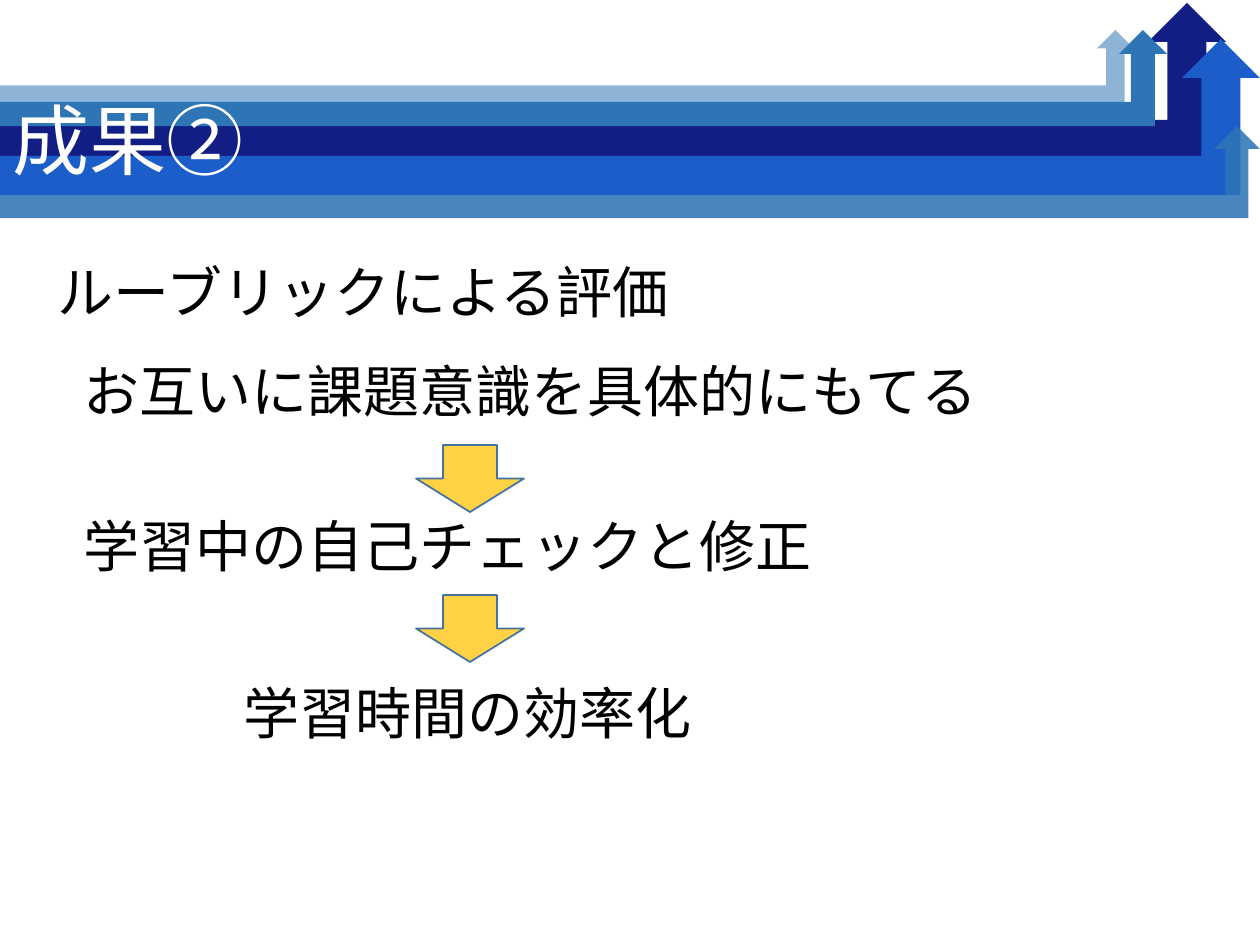
"""Build the results slide with a banner of bent arrows and three linked outcomes."""
from lxml.etree import SubElement
from pptx import Presentation
from pptx.dml.color import RGBColor
from pptx.enum.shapes import MSO_SHAPE as Shape
from pptx.enum.text import MSO_ANCHOR as Anchor, MSO_AUTO_SIZE as AutoSize, PP_ALIGN as Align
from pptx.oxml.ns import qn
from pptx.util import Pt

PX = 914400 / 126
FONT = "Noto Sans CJK JP"
NAVY = RGBColor(0x13, 0x1E, 0x85)
BLUE = RGBColor(0x1B, 0x5D, 0xC9)
STEEL = RGBColor(0x2E, 0x75, 0xB6)
GOLD = RGBColor(0xFF, 0xC0, 0x00)
OUTLINE = RGBColor(0x43, 0x73, 0x9E)
WHITE = RGBColor(0xFF, 0xFF, 0xFF)
BLACK = RGBColor(0x00, 0x00, 0x00)


def add_arrow(shapes, preset, box, color, opacity):
    arrow = shapes.add_shape(preset, *[round(n * PX) for n in box])
    arrow.shadow.inherit = False
    arrow.fill.solid()
    arrow.fill.fore_color.rgb = color
    arrow.line.fill.background()
    if opacity < 100:
        tint = arrow._element.spPr.find(qn("a:solidFill"))[0]
        SubElement(tint, qn("a:alpha"), val=str(opacity * 1000))
    return arrow


def add_run(paragraph, text, size, color):
    run = paragraph.add_run()
    run.text = text
    run.font.size = Pt(size)
    run.font.name = FONT
    run.font.color.rgb = color
    SubElement(run.font._element, qn("a:ea"), typeface=FONT)


deck = Presentation()
deck.slide_width, deck.slide_height = round(1260 * PX), round(945 * PX)
slide = deck.slides.add_slide(deck.slide_layouts[0])
title, subtitle = slide.placeholders
subtitle._element.getparent().remove(subtitle._element)

banner = slide.shapes.add_group_shape()
for top, width, height, color, opacity in [
    (3, 1226, 156, NAVY, 100),
    (39, 1260, 156, BLUE, 100),
    (30, 1167, 96, STEEL, 100),
    (30, 1134, 74, STEEL, 54),
    (126, 1260, 92, STEEL, 87),
]:
    add_arrow(banner.shapes, Shape.BENT_UP_ARROW, (0, top, width, height), color, opacity)

slide.shapes._spTree.append(title._element)
title.left, title.top, title.width, title.height = [round(n * PX) for n in (0, 57, 1463, 175)]
title.text_frame.vertical_anchor = Anchor.MIDDLE
heading = title.text_frame.paragraphs[0]
heading.alignment = Align.LEFT
heading.line_spacing = 0.9
add_run(heading, "成果②", 44, WHITE)

for left, top, width, wraps, statement in [
    (71, 350, 1095, True, "お互いに課題意識を具体的にもてる"),
    (45, 251, 648, False, "ルーブリックによる評価"),
    (71, 505, 971, True, "学習中の自己チェックと修正"),
    (231, 672, 478, False, "学習時間の効率化"),
]:
    outcome = slide.shapes.add_textbox(*[round(n * PX) for n in (left, top, width, 81)])
    outcome.text_frame.word_wrap = wraps
    outcome.text_frame.auto_size = AutoSize.SHAPE_TO_FIT_TEXT
    add_run(outcome.text_frame.paragraphs[0], statement, 32, BLACK)

for top in (445, 595):
    step = add_arrow(slide.shapes, Shape.DOWN_ARROW, (416, top, 108, 67), GOLD, 73)
    step.line.color.rgb = OUTLINE
    step.line.width = Pt(1)

deck.save("out.pptx")
